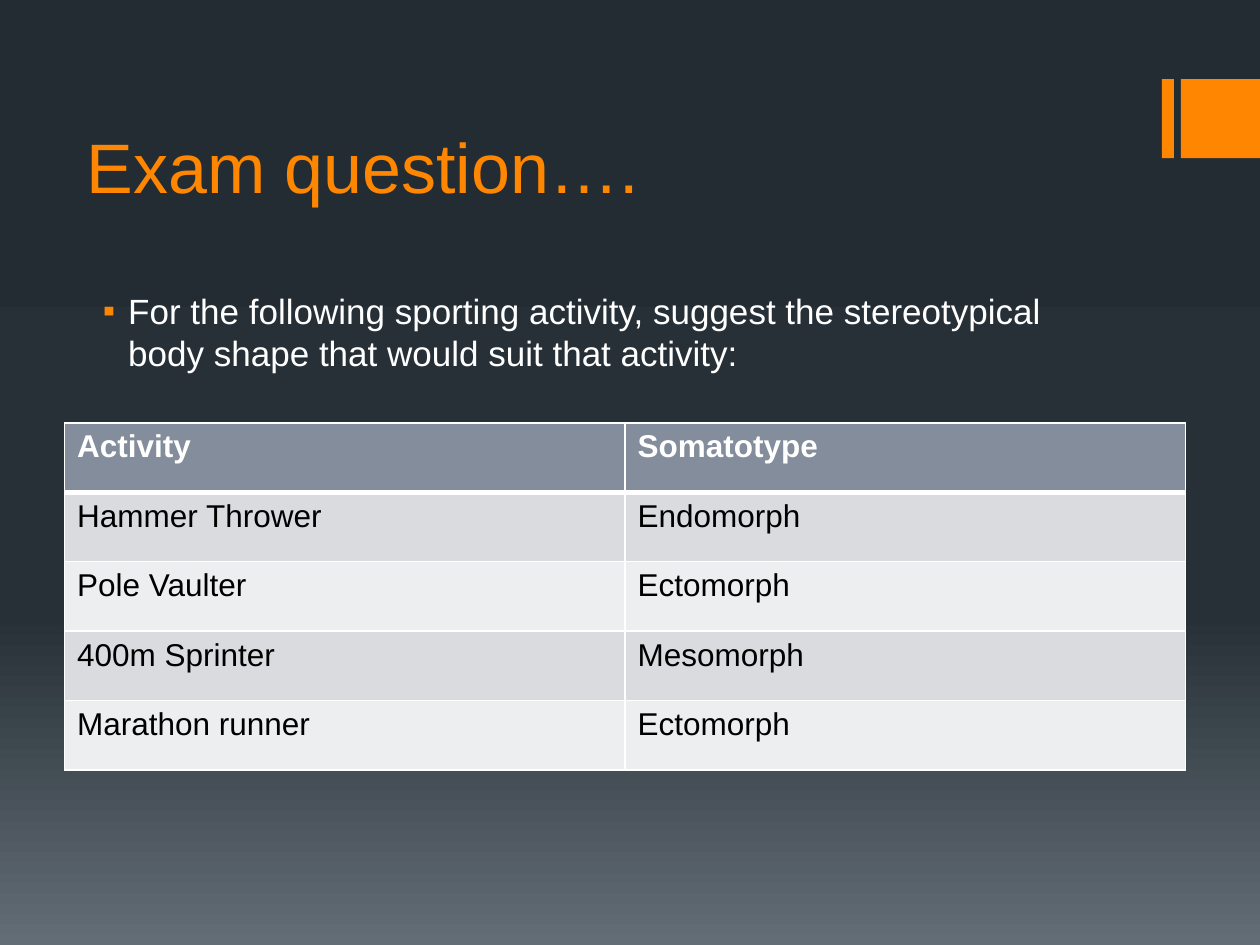
from dataclasses import dataclass

from lxml.etree import SubElement
from pptx import Presentation
from pptx.dml.color import RGBColor
from pptx.enum.shapes import MSO_SHAPE
from pptx.enum.text import MSO_ANCHOR
from pptx.oxml.ns import qn
from pptx.util import Pt

ORANGE, WHITE, BLACK = "FF8600", "FFFFFF", "000000"
HEADER, BANDS = "838D9B", ("D9DBDE", "EDEEEF")
BACKGROUND = ((0, "242C33"), (65, "273037"), (100, "636D76"))
ROWS = (
    ("Activity", "Somatotype"),
    ("Hammer Thrower", "Endomorph"),
    ("Pole Vaulter", "Ectomorph"),
    ("400m Sprinter", "Mesomorph"),
    ("Marathon runner", "Ectomorph"),
)


@dataclass
class Box:
    x: float
    y: float
    w: float
    h: float

    def lengths(self) -> tuple:
        return Pt(self.x), Pt(self.y), Pt(self.w), Pt(self.h)


def rgb(color: str) -> RGBColor:
    return RGBColor.from_string(color)


def add_color(parent, color: str) -> None:
    SubElement(parent, qn("a:srgbClr"), val=color)


def paint_background(s) -> None:
    fill = s.background.fill
    fill.gradient()
    fill.gradient_angle = 270
    stops = s.element.find(".//" + qn("a:gsLst"))
    for stop in list(stops):
        stops.remove(stop)
    for percent, color in BACKGROUND:
        add_color(SubElement(stops, qn("a:gs"), pos=str(percent * 1000)), color)


def write(tf, text: str, *, size: float, color: str, bold: bool = False):
    p = tf.paragraphs[0]
    r = p.add_run()
    r.text = text
    r.font.name = "Arial"
    r.font.size = Pt(size)
    r.font.bold = bold
    r.font.color.rgb = rgb(color)
    return p


def add_text(s, box: Box, text: str, *, anchor=MSO_ANCHOR.TOP, **fmt):
    tf = s.shapes.add_textbox(*box.lengths()).text_frame
    tf.word_wrap = True
    tf.vertical_anchor = anchor
    return write(tf, text, **fmt)


def add_bullet(p, char: str, color: str) -> None:
    p.space_before = Pt(4)
    pPr = p._p.get_or_add_pPr()
    pPr.set("marL", str(Pt(18)))
    pPr.set("indent", str(-Pt(14.4)))
    add_color(SubElement(pPr, qn("a:buClr")), color)
    SubElement(pPr, qn("a:buFont"), typeface="Arial")
    SubElement(pPr, qn("a:buChar"), char=char)


def add_bar(s, box: Box) -> None:
    sp = s.shapes.add_shape(MSO_SHAPE.RECTANGLE, *box.lengths())
    sp.shadow.inherit = False
    sp.fill.solid()
    sp.fill.fore_color.rgb = rgb(ORANGE)
    sp.line.fill.background()


def set_borders(cell, widths: dict[str, float]) -> None:
    tcPr = cell._tc.get_or_add_tcPr()
    for index, (side, width) in enumerate(widths.items()):
        ln = SubElement(tcPr, qn(f"a:ln{side}"), w=str(Pt(width)))
        add_color(SubElement(ln, qn("a:solidFill")), WHITE)
        tcPr.insert(index, ln)


def add_grid(s, box: Box) -> None:
    table = s.shapes.add_table(len(ROWS), len(ROWS[0]), *box.lengths()).table
    for i, row in enumerate(ROWS):
        head = i == 0
        for j, text in enumerate(row):
            cell = table.cell(i, j)
            cell.fill.solid()
            cell.fill.fore_color.rgb = rgb(HEADER if head else BANDS[(i - 1) % 2])
            write(cell.text_frame, text, size=18, color=WHITE if head else BLACK, bold=head)
            set_borders(cell, {"L": 1, "R": 1, "T": 3 if i == 1 else 1, "B": 3 if head else 1})


def main() -> None:
    """Build the exam question slide."""
    prs = Presentation()
    prs.slide_width, prs.slide_height = Pt(720), Pt(540)
    s = prs.slides.add_slide(prs.slide_layouts[6])
    paint_background(s)
    for x, w in ((664, 6.8), (674.8, 45.2)):
        add_bar(s, Box(x, 45.2, w, 45.2))
    add_text(s, Box(42.5, 31.5, 576, 90.7), "Exam question….",
             anchor=MSO_ANCHOR.BOTTOM, size=40, color=ORANGE)
    p = add_text(s, Box(48.2, 162, 576, 278.6),
                 "For the following sporting activity, suggest the stereotypical "
                 "body shape that would suit that activity:", size=20, color=WHITE)
    add_bullet(p, "▪", ORANGE)
    add_grid(s, Box(36.9, 241.6, 640.6, 198.5))
    prs.save("out.pptx")


if __name__ == "__main__":
    main()
